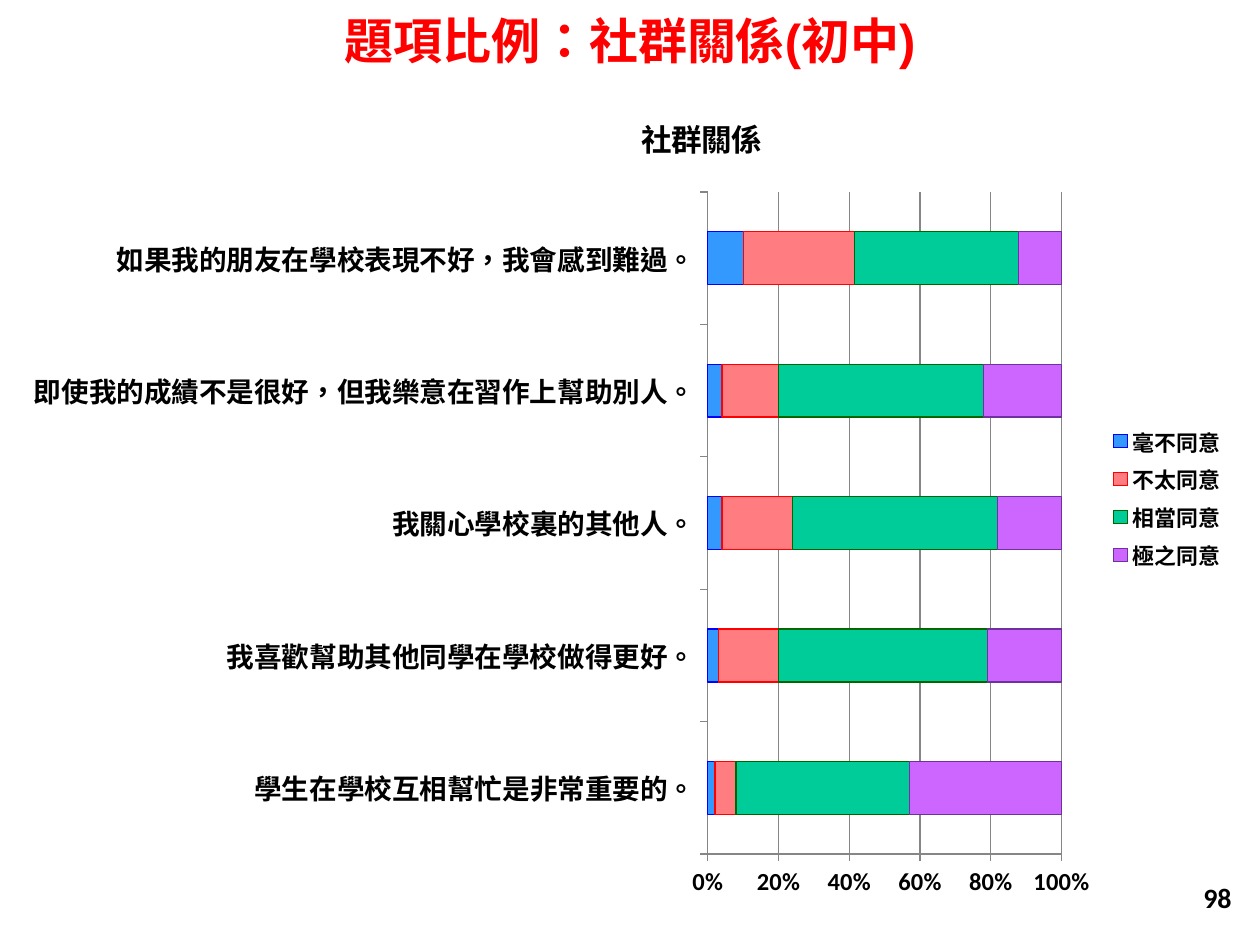
from dataclasses import dataclass
from lxml.etree import SubElement
from pptx import Presentation
from pptx.chart.data import CategoryChartData
from pptx.dml.color import RGBColor
from pptx.enum.chart import XL_CHART_TYPE, XL_LEGEND_POSITION, XL_TICK_MARK
from pptx.enum.lang import MSO_LANGUAGE_ID
from pptx.enum.text import MSO_ANCHOR, PP_ALIGN
from pptx.oxml.ns import qn
from pptx.util import Emu, Pt

PX_PER_INCH = 126


@dataclass(frozen=True)
class Box:
    left: int
    top: int
    width: int
    height: int

    def emu(self) -> tuple:
        return tuple(map(px, (self.left, self.top, self.width, self.height)))


@dataclass(frozen=True)
class Label:
    box: Box
    text: str
    font: str
    size: int
    color: str
    align: PP_ALIGN


@dataclass(frozen=True)
class Answer:
    name: str
    values: tuple
    fill: str
    line: str


LABELS = [
    Label(Box(0, 0, 1260, 79), "題項比例：社群關係(初中)", "Arial", 28, "FF0000", PP_ALIGN.CENTER),
    Label(Box(950, 872, 294, 50), "98", "Calibri", 16, "000000", PP_ALIGN.RIGHT),
]
STATEMENTS = [
    "學生在學校互相幫忙是非常重要的。",
    "我喜歡幫助其他同學在學校做得更好。",
    "我關心學校裏的其他人。",
    "即使我的成績不是很好，但我樂意在習作上幫助別人。",
    "如果我的朋友在學校表現不好，我會感到難過。",
]
ANSWERS = [
    Answer("毫不同意", (2, 3, 4, 4, 10), "3399FF", "0000FF"),
    Answer("不太同意", (6, 17, 20, 16, 31), "FF7C80", "FF0000"),
    Answer("相當同意", (49, 59, 58, 58, 46), "00CC99", "006600"),
    Answer("極之同意", (43, 21, 18, 22, 12), "CC66FF", "7030A0"),
]
CHART_BOX = Box(32, 79, 1207, 838)
PLOT_BOX = Box(707, 192, 354, 662)
TITLE_CORNER = (636, 107)


def px(length: int) -> Emu:
    return Emu(round(length * 914400 / PX_PER_INCH))


def rgb(color: str) -> RGBColor:
    return RGBColor.from_string(color)


def set_font(font, size: float, name: str = "Calibri", color: str = "000000") -> None:
    settings = {
        "size": Pt(size),
        "name": name,
        "bold": True,
        "language_id": MSO_LANGUAGE_ID.TAIWAN if hasattr(MSO_LANGUAGE_ID, "TAIWAN")
        else MSO_LANGUAGE_ID.TRADITIONAL_CHINESE,
    }
    for key, value in settings.items():
        setattr(font, key, value)
    font.color.rgb = rgb(color)


def set_line(line, color: str) -> None:
    line.color.rgb = rgb(color)
    line.width = Pt(0.75)


def add_label(slide, label: Label) -> None:
    frame = slide.shapes.add_textbox(*label.box.emu()).text_frame
    for key, value in {"word_wrap": True, "vertical_anchor": MSO_ANCHOR.MIDDLE}.items():
        setattr(frame, key, value)
    paragraph = frame.paragraphs[0]
    paragraph.alignment = label.align
    run = paragraph.add_run()
    run.text = label.text
    set_font(run.font, label.size, label.font, label.color)


def set_layout(parent, settings: dict) -> None:
    layout = parent.find(qn("c:layout"))
    if layout is None:
        layout = parent.makeelement(qn("c:layout"), {})
        text = parent.find(qn("c:tx"))
        parent.insert(0 if text is None else 1, layout)
    manual = SubElement(layout, qn("c:manualLayout"))
    for key, value in settings.items():
        SubElement(manual, qn(f"c:{key}")).set("val", str(value))


def chart_fractions(left: int, top: int) -> dict:
    return {
        "xMode": "edge",
        "yMode": "edge",
        "x": round((left - CHART_BOX.left) / CHART_BOX.width, 2),
        "y": round((top - CHART_BOX.top) / CHART_BOX.height, 3),
    }


def add_answer_chart(slide) -> None:
    data = CategoryChartData()
    data.categories = STATEMENTS
    for answer in ANSWERS:
        data.add_series(answer.name, answer.values)
    chart = slide.shapes.add_chart(
        XL_CHART_TYPE.BAR_STACKED_100, *CHART_BOX.emu(), data
    ).chart
    set_font(chart.font, 10)

    chart.has_title = True
    title = chart.chart_title
    title.include_in_layout = False
    title.text_frame.text = "社群關係"
    set_font(title.text_frame.paragraphs[0].runs[0].font, 17.5)
    title_element = chart.element.find(".//" + qn("c:title"))
    set_layout(title_element, chart_fractions(*TITLE_CORNER))

    plot = chart.plots[0]
    for key, value in {"gap_width": 150, "overlap": 100, "vary_by_categories": False}.items():
        setattr(plot, key, value)
    for series, answer in zip(plot.series, ANSWERS):
        series.format.fill.solid()
        series.format.fill.fore_color.rgb = rgb(answer.fill)
        set_line(series.format.line, answer.line)

    for axis, size in ((chart.category_axis, 15.8), (chart.value_axis, 14)):
        set_font(axis.tick_labels.font, size)
        set_line(axis.format.line, "868686")
        axis.major_tick_mark = XL_TICK_MARK.OUTSIDE
    value_axis = chart.value_axis
    for key, value in {"minimum_scale": 0, "maximum_scale": 1, "major_unit": 0.2}.items():
        setattr(value_axis, key, value)
    value_axis.tick_labels.number_format = "0%"
    value_axis.tick_labels.number_format_is_linked = False
    set_line(value_axis.major_gridlines.format.line, "868686")

    chart.has_legend = True
    chart.legend.position = XL_LEGEND_POSITION.RIGHT
    chart.legend.include_in_layout = False
    set_font(chart.legend.font, 12.5)

    plot_area = chart.element.find(".//" + qn("c:plotArea"))
    set_layout(plot_area, {
        "layoutTarget": "inner",
        **chart_fractions(PLOT_BOX.left, PLOT_BOX.top),
        "w": round(PLOT_BOX.width / CHART_BOX.width, 3),
        "h": round(PLOT_BOX.height / CHART_BOX.height, 2),
    })


def main() -> None:
    presentation = Presentation()
    presentation.slide_width = px(1260)
    presentation.slide_height = px(945)
    slide = presentation.slides.add_slide(presentation.slide_layouts[6])
    for label in LABELS:
        add_label(slide, label)
    add_answer_chart(slide)
    presentation.save("out.pptx")


if __name__ == "__main__":
    main()
